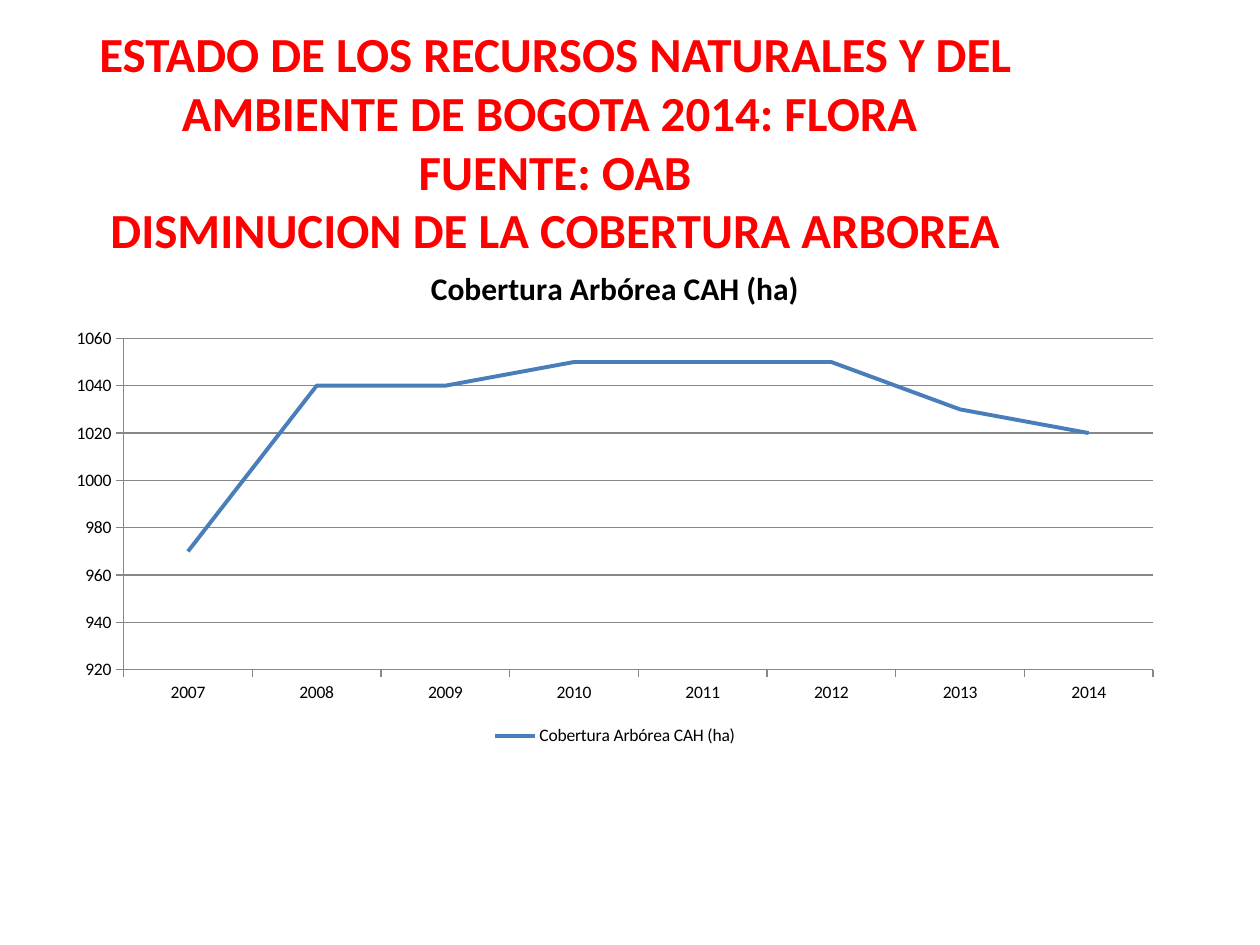
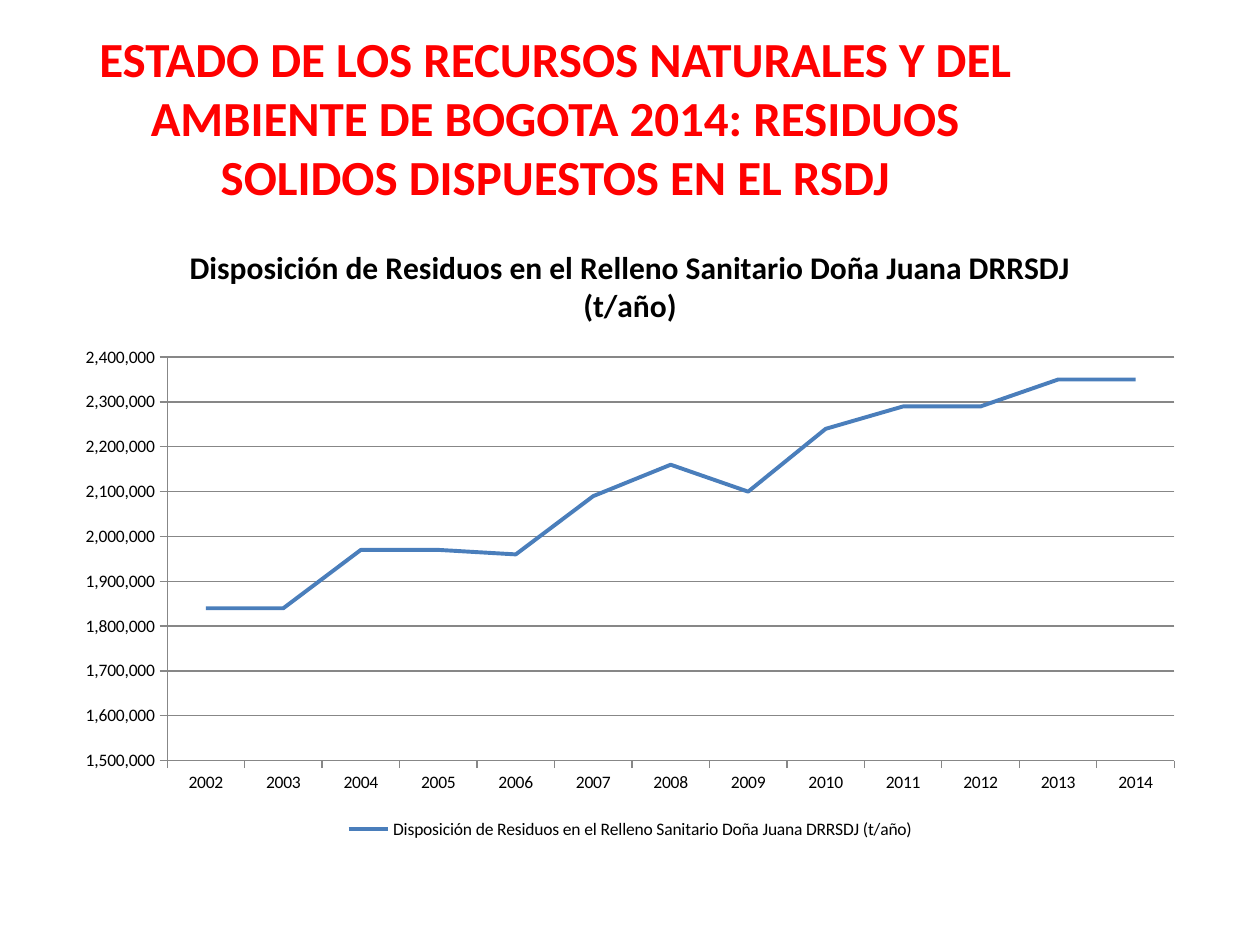
from pptx import Presentation
from pptx.chart.data import CategoryChartData
from pptx.dml.color import RGBColor
from pptx.enum.chart import XL_CHART_TYPE, XL_LEGEND_POSITION, XL_TICK_MARK
from pptx.enum.text import MSO_ANCHOR, PP_ALIGN
from pptx.util import Inches, Pt

HUES = {"title": "FF0000", "text": "000000", "line": "4A7EBB", "grid": "878787",
        "back": "FFFFFF"}
FACE = "Calibri"
HEAD = "ESTADO DE LOS RECURSOS NATURALES Y DEL AMBIENTE DE BOGOTA 2014: "

TREES = {
    "name": "Cobertura Arbórea CAH (ha)",
    "box": (0.43, 1.94, 8.9, 4.02),
    "years": range(2007, 2015),
    "values": (970, 1040, 1040, 1050, 1050, 1050, 1030, 1020),
    "format": "General",
    "scale": {"minimum_scale": 920, "maximum_scale": 1060, "major_unit": 20},
}
WASTE = {
    "name": "Disposición de Residuos en el Relleno Sanitario Doña Juana DRRSDJ (t/año)",
    "box": (0.5, 1.75, 9, 4.95),
    "years": range(2002, 2015),
    "values": (1840000, 1840000, 1970000, 1970000, 1960000, 2090000, 2160000,
               2100000, 2240000, 2290000, 2290000, 2350000, 2350000),
    "format": "#,##0",
    "scale": {"minimum_scale": 1500000, "maximum_scale": 2400000,
              "major_unit": 100000},
}


def style(item, values):
    for key, value in values.items():
        setattr(item, key, value)


def hue(name):
    return RGBColor.from_string(HUES[name])


def ink(font, size, name, bold):
    style(font, {"name": FACE, "size": Pt(size), "bold": bold})
    font.color.rgb = hue(name)


def stroke(line, name, width):
    line.color.rgb = hue(name)
    line.width = Pt(width)


def add_title(slide, text, height):
    box = slide.shapes.add_textbox(*map(Inches, (0.5, 0.3, 7.81, height)))
    frame = box.text_frame
    style(frame, {"word_wrap": True, "vertical_anchor": MSO_ANCHOR.MIDDLE})
    para = frame.paragraphs[0]
    para.text = text
    para.alignment = PP_ALIGN.CENTER
    for run in para.runs:
        ink(run.font, 28, "title", True)


def add_trend(slide, topic):
    """Draw one yearly series as a line chart with title and legend."""
    data = CategoryChartData(number_format=topic["format"])
    data.categories = [str(year) for year in topic["years"]]
    data.add_series(topic["name"], topic["values"])
    chart = slide.shapes.add_chart(XL_CHART_TYPE.LINE,
                                   *map(Inches, topic["box"]), data).chart
    ink(chart.font, 10, "text", False)

    style(chart, {"has_title": True, "has_legend": True})
    head = chart.chart_title.text_frame
    head.text = topic["name"]
    ink(head.paragraphs[0].runs[0].font, 18, "text", True)
    style(chart.legend, {"position": XL_LEGEND_POSITION.BOTTOM,
                         "include_in_layout": False})

    chart.plots[0].vary_by_categories = False
    series = chart.plots[0].series[0]
    series.smooth = False
    stroke(series.format.line, "line", 2.25)

    for axis in (chart.category_axis, chart.value_axis):
        axis.major_tick_mark = XL_TICK_MARK.OUTSIDE
        stroke(axis.format.line, "grid", 0.75)
    axis = chart.value_axis
    style(axis, {"has_major_gridlines": True, **topic["scale"]})
    stroke(axis.major_gridlines.format.line, "grid", 0.75)
    style(axis.tick_labels, {"number_format": topic["format"],
                             "number_format_is_linked": False})


def add_page(deck, text, height, topic):
    slide = deck.slides.add_slide(deck.slide_layouts[6])
    fill = slide.background.fill
    fill.solid()
    fill.fore_color.rgb = hue("back")
    add_title(slide, text, height)
    add_trend(slide, topic)


def main():
    deck = Presentation()
    style(deck, {"slide_width": Inches(10), "slide_height": Inches(7.5)})
    add_page(deck, HEAD + "FLORA \vFUENTE: OAB\vDISMINUCION DE LA COBERTURA ARBOREA",
             1.64, TREES)
    add_page(deck, HEAD + "RESIDUOS SOLIDOS DISPUESTOS EN EL RSDJ", 1.25, WASTE)
    deck.save("out.pptx")


if __name__ == "__main__":
    main()
